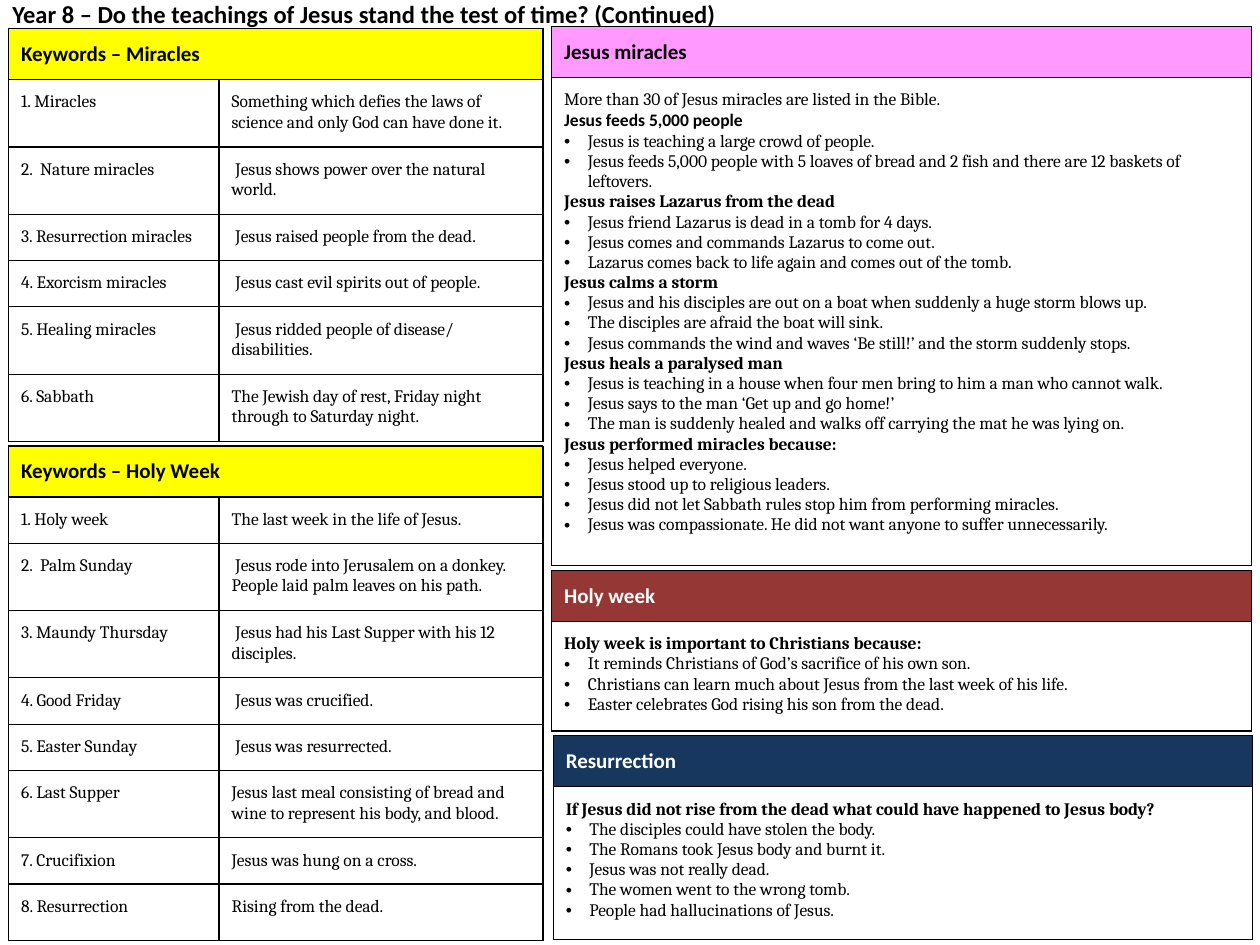
from lxml.etree import SubElement
from pptx import Presentation
from pptx.dml.color import RGBColor
from pptx.oxml.ns import qn
from pptx.util import Pt

BLACK = RGBColor(0x00, 0x00, 0x00)
WHITE = RGBColor(0xFF, 0xFF, 0xFF)
YELLOW = RGBColor(0xFF, 0xFF, 0x00)
PINK = RGBColor(0xFF, 0x99, 0xFF)
BRICK = RGBColor(0x95, 0x37, 0x35)
NAVY = RGBColor(0x17, 0x37, 0x5E)
SANS, SERIF = "Calibri", "Cambria"

TITLE = "Year 8 – Do the teachings of Jesus stand the test of time? (Continued)"

ONE_LINE, TWO_LINES, LAST_ROW = 26.4, 38.3, 32.4  # row heights
HEADER = 29.1
KEYWORD_COLUMNS = (120.3, 185.1)
PANEL_WIDTH = 399.8
PAD = 7.2
INDENT = 13.5

# heading, left, top, rows of (keyword, meaning, height)
KEYWORD_TABLES = [
    ("Keywords – Miracles", 4.9, 16.4, [
        ("1. Miracles", "Something which defies the laws of science and only God can have done it.", TWO_LINES),
        ("2.  Nature miracles", " Jesus shows power over the natural world.", TWO_LINES),
        ("3. Resurrection miracles", " Jesus raised people from the dead.", ONE_LINE),
        ("4. Exorcism miracles", " Jesus cast evil spirits out of people.", ONE_LINE),
        ("5. Healing miracles", " Jesus ridded people of disease/ disabilities.", TWO_LINES),
        ("6. Sabbath", "The Jewish day of rest, Friday night through to Saturday night.", TWO_LINES),
    ]),
    ("Keywords – Holy Week", 4.9, 254.9, [
        ("1. Holy week", "The last week in the life of Jesus.", ONE_LINE),
        ("2.  Palm Sunday", " Jesus rode into Jerusalem on a donkey. People laid palm leaves on his path.", TWO_LINES),
        ("3. Maundy Thursday", " Jesus had his Last Supper with his 12 disciples.", TWO_LINES),
        ("4. Good Friday", " Jesus was crucified.", ONE_LINE),
        ("5. Easter Sunday", " Jesus was resurrected.", ONE_LINE),
        ("6. Last Supper", "Jesus last meal consisting of bread and wine to represent his body, and blood.", TWO_LINES),
        ("7. Crucifixion", "Jesus was hung on a cross.", ONE_LINE),
        ("8. Resurrection", "Rising from the dead.", LAST_ROW),
    ]),
]

# heading, fill, text colour, left, top, body height, intro,
# sections of (subheading, its font, bullets)
PANELS = [
    ("Jesus miracles", PINK, BLACK, 315.2, 15.2, 278.3,
     "More than 30 of Jesus miracles are listed in the Bible.", [
         ("Jesus feeds 5,000 people", SANS, [
             "Jesus is teaching a large crowd of people.",
             "Jesus feeds 5,000 people with 5 loaves of bread and 2 fish and there are 12 baskets of leftovers.",
         ]),
         ("Jesus raises Lazarus from the dead", SERIF, [
             "Jesus friend Lazarus is dead in a tomb for 4 days.",
             "Jesus comes and commands Lazarus to come out.",
             "Lazarus comes back to life again and comes out of the tomb.",
         ]),
         ("Jesus calms a storm", SERIF, [
             "Jesus and his disciples are out on a boat when suddenly a huge storm blows up.",
             "The disciples are afraid the boat will sink.",
             "Jesus commands the wind and waves ‘Be still!’ and the storm suddenly stops.",
         ]),
         ("Jesus heals a paralysed man", SERIF, [
             "Jesus is teaching in a house when four men bring to him a man who cannot walk.",
             "Jesus says to the man ‘Get up and go home!’",
             "The man is suddenly healed and walks off carrying the mat he was lying on.",
         ]),
         ("Jesus performed miracles because:", SERIF, [
             "Jesus helped everyone.",
             "Jesus stood up to religious leaders.",
             "Jesus did not let Sabbath rules stop him from performing miracles.",
             "Jesus was compassionate. He did not want anyone to suffer unnecessarily.",
         ]),
     ]),
    ("Holy week", BRICK, WHITE, 315.2, 326, 62.6, None, [
        ("Holy week is important to Christians because:", SERIF, [
            "It reminds Christians of God’s sacrifice of his own son.",
            "Christians can learn much about Jesus from the last week of his life.",
            "Easter celebrates God rising his son from the dead.",
        ]),
    ]),
    ("Resurrection", NAVY, WHITE, 316.1, 420.5, 87.5, None, [
        ("If Jesus did not rise from the dead what could have happened to Jesus body?", SERIF, [
            "The disciples could have stolen the body.",
            "The Romans took Jesus body and burnt it.",
            "Jesus was not really dead.",
            "The women went to the wrong tomb.",
            "People had hallucinations of Jesus.",
        ]),
    ]),
]


def write(paragraph, text, size=10, face=SERIF, bold=False, color=BLACK, bullet=False):
    paragraph.text = text
    if bullet:
        props = paragraph._p.get_or_add_pPr()
        props.set("marL", str(Pt(INDENT)))
        props.set("indent", str(-Pt(INDENT)))
        bullet_color = SubElement(props, qn("a:buClr"))
        SubElement(bullet_color, qn("a:srgbClr"), val=str(BLACK))
        SubElement(props, qn("a:buFont"), typeface="Arial")
        SubElement(props, qn("a:buChar"), char="•")
    font = paragraph.font
    font.size, font.name, font.bold = Pt(size), face, bold
    font.color.rgb = color


def frame_cell(cell):
    """Give the cell its padding, thin black borders and no fill."""
    cell.margin_left = cell.margin_right = Pt(PAD)
    cell.margin_top = cell.margin_bottom = Pt(PAD)
    props = cell._tc.get_or_add_tcPr()
    for side in ("lnL", "lnR", "lnT", "lnB"):
        line = SubElement(props, qn(f"a:{side}"), w=str(Pt(0.75)))
        fill = SubElement(line, qn("a:solidFill"))
        SubElement(fill, qn("a:srgbClr"), val=str(BLACK))
    cell.fill.background()


def add_headed_table(slide, heading, fill, color, left, top, widths, body_heights):
    """Add a framed table whose first row is one coloured heading."""
    heights = [HEADER, *body_heights]
    table = slide.shapes.add_table(
        len(heights), len(widths), Pt(left), Pt(top), Pt(sum(widths)), Pt(sum(heights))).table
    table.first_row = table.horz_banding = False
    for column, width in zip(table.columns, widths):
        column.width = Pt(width)
    for row, height in zip(table.rows, heights):
        row.height = Pt(height)
    for cell in table.iter_cells():
        frame_cell(cell)
    header = table.cell(0, 0)
    if len(widths) > 1:
        header.merge(table.cell(0, len(widths) - 1))
    header.fill.solid()
    header.fill.fore_color.rgb = fill
    write(header.text_frame.paragraphs[0], heading, 12, SANS, True, color)
    return table


def add_keywords(slide, heading, left, top, rows):
    table = add_headed_table(slide, heading, YELLOW, BLACK, left, top,
                             KEYWORD_COLUMNS, [height for _, _, height in rows])
    for r, (keyword, meaning, _) in enumerate(rows, 1):
        for c, text in enumerate((keyword, meaning)):
            write(table.cell(r, c).text_frame.paragraphs[0], text)


def add_panel(slide, heading, fill, color, left, top, body_height, intro, sections):
    table = add_headed_table(slide, heading, fill, color, left, top, [PANEL_WIDTH], [body_height])
    lines = [(intro, {})] if intro else []
    for subheading, face, bullets in sections:
        lines.append((subheading, {"face": face, "bold": True}))
        lines += [(text, {"bullet": True}) for text in bullets]
    body = table.cell(1, 0).text_frame
    for i, (text, style) in enumerate(lines):
        write(body.add_paragraph() if i else body.paragraphs[0], text, **style)


def main():
    deck = Presentation()
    deck.slide_width, deck.slide_height = Pt(720), Pt(540)
    slide = deck.slides.add_slide(deck.slide_layouts[6])

    title = slide.shapes.add_textbox(Pt(0), Pt(-4.3), Pt(720), Pt(24.5)).text_frame
    title.word_wrap = True
    write(title.paragraphs[0], TITLE, 14, SANS, True)

    for keywords in KEYWORD_TABLES:
        add_keywords(slide, *keywords)
    for panel in PANELS:
        add_panel(slide, *panel)
    deck.save("out.pptx")


if __name__ == "__main__":
    main()
